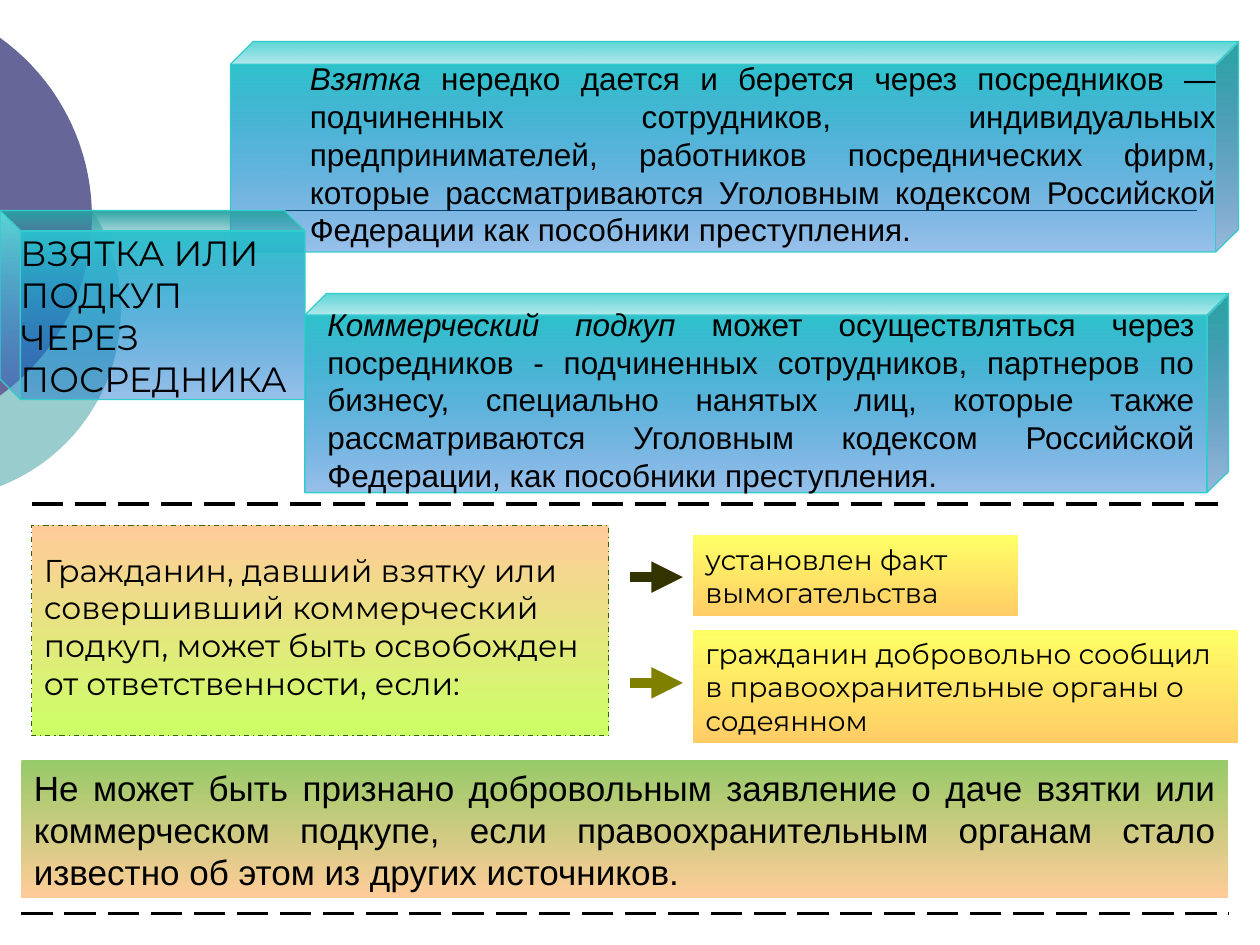
from math import asin, cos, sin

from lxml.etree import SubElement
from pptx import Presentation
from pptx.dml.color import RGBColor
from pptx.enum.dml import MSO_LINE_DASH_STYLE as Dash
from pptx.enum.shapes import MSO_CONNECTOR, MSO_SHAPE
from pptx.enum.text import MSO_ANCHOR as Anchor, MSO_AUTO_SIZE, PP_ALIGN as Align
from pptx.oxml.ns import qn
from pptx.util import Inches, Pt

SANS, DISPLAY = "Arial", "Montserrat"
BLACK = "000000"
YELLOW = ("FFFF66", "FFCC66")


def rgb(value):
    return RGBColor.from_string(value)


class Builder:
    def __init__(self, slide):
        self.shapes = slide.shapes

    def segment(self, mid_y, half_height, bulge, color, steps=40):
        """Part of a disc that bulges out of the left slide edge."""
        radius = (half_height ** 2 + bulge ** 2) / (2 * bulge)
        center_x, limit = bulge - radius, asin(half_height / radius)
        angles = [limit * (2 * i / steps - 1) for i in range(steps + 1)]
        points = [(Inches(center_x + radius * cos(a)), Inches(mid_y + radius * sin(a)))
                  for a in angles]
        form = self.shapes.build_freeform(*points[0])
        form.add_line_segments(points[1:])
        sp = form.convert_to_shape()
        sp.shadow.inherit = False
        sp.fill.solid()
        sp.fill.fore_color.rgb = rgb(color)
        sp.line.fill.background()

    def line(self, x1, x2, y, color=BLACK, width=2.25, dash=None, arrow=False):
        ln = self.shapes.add_connector(
            MSO_CONNECTOR.STRAIGHT, Inches(x1), Inches(y), Inches(x2), Inches(y))
        ln.line.color.rgb = rgb(color)
        ln.line.width = Pt(width)
        if dash:
            ln.line.dash_style = dash
        if arrow:
            ln_xml = ln._element.spPr.find(qn("a:ln"))
            SubElement(ln_xml, qn("a:tailEnd"), type="triangle")
        SubElement(ln._element.spPr, qn("a:effectLst"))

    def panel(self, box, colors, kind=MSO_SHAPE.RECTANGLE, border=None, dash=None):
        """Shape with a gradient that runs from top to bottom."""
        sp = self.shapes.add_shape(kind, *map(Inches, box))
        sp.shadow.inherit = False
        sp.fill.gradient()
        sp.fill.gradient_angle = 270
        for stop, color in zip(sp.fill.gradient_stops, colors):
            stop.color.rgb = rgb(color)
        if border:
            sp.line.color.rgb = rgb(border)
            sp.line.width = Pt(0.75)
            if dash:
                sp.line.dash_style = dash
        else:
            sp.line.fill.background()
        return sp

    def cube(self, box, rotation=0):
        sp = self.panel(box, ("33CCCC", "0066CC"), MSO_SHAPE.CUBE, "33CCCC")
        sp.adjustments[0] = 0.108
        sp.rotation = rotation
        grad = sp._element.spPr.find(qn("a:gradFill"))
        grad.set("rotWithShape", "0")
        last_color = grad.findall(".//" + qn("a:srgbClr"))[-1]
        SubElement(last_color, qn("a:alpha"), val="40000")
        return sp

    def textbox(self, box):
        return self.shapes.add_textbox(*map(Inches, box))

    def add_text(self, sp, paragraphs, size, font, align=Align.LEFT,
                 anchor=Anchor.MIDDLE, indent=0):
        """Each paragraph is a list of (text, italic) runs."""
        tf = sp.text_frame
        tf.word_wrap = True
        tf.auto_size = MSO_AUTO_SIZE.NONE
        tf.vertical_anchor = anchor
        for i, runs in enumerate(paragraphs):
            p = tf.add_paragraph() if i else tf.paragraphs[0]
            p.alignment = align
            if indent:
                p._p.get_or_add_pPr().set("marL", str(Inches(indent)))
            for text, italic in runs:
                r = p.add_run()
                r.text = text
                r.font.name = font
                r.font.size = Pt(size)
                r.font.italic = italic
                r.font.color.rgb = rgb(BLACK)
        return tf


def main():
    prs = Presentation()
    prs.slide_width, prs.slide_height = Inches(10), Inches(7.5)
    b = Builder(prs.slides.add_slide(prs.slide_layouts[6]))

    b.segment(2.46, 1.4, 0.96, "99CCCC")
    b.segment(1.72, 1.42, 0.73, "666699")
    b.line(1.5, 9.5, 1.67, width=1)

    # Bribery through an intermediary
    b.cube((1.83, 0.33, 8, 1.67))
    topic = b.cube((0.46, 1.21, 1.5, 2.42), rotation=270)
    words = ("ВЗЯТКА ИЛИ", "ПОДКУП", "ЧЕРЕЗ", "ПОСРЕДНИКА")
    tf = b.add_text(topic, [[(word, False)] for word in words], 20, DISPLAY)
    tf.word_wrap = False
    tf.margin_left = tf.margin_right = tf.margin_top = tf.margin_bottom = 0
    tf._txBody.bodyPr.set("vert", "eaVert")

    b.add_text(b.textbox((2.17, 0.42, 7.58, 1.6)), [[
        ("Взятка", True),
        (" нередко дается и берется через посредников — подчиненных сотрудников, "
         "индивидуальных предпринимателей, работников посреднических фирм, которые "
         "рассматриваются Уголовным кодексом Российской Федерации как пособники "
         "преступления.", False)]], 18, SANS, Align.JUSTIFY, indent=0.19)

    b.cube((2.42, 2.33, 7.33, 1.58))
    b.add_text(b.textbox((2.5, 2.37, 7.08, 1.6)), [[
        ("Коммерческий подкуп", True),
        (" может осуществляться через посредников - подчиненных сотрудников, "
         "партнеров по бизнесу, специально нанятых лиц, которые также "
         "рассматриваются Уголовным кодексом Российской Федерации, как пособники "
         "преступления.", False)]], 18, SANS, Align.JUSTIFY)

    # Release from liability and its two conditions
    release = b.panel((0.25, 4.17, 4.58, 1.67), ("FFCC99", "CCFF66"),
                      border="336600", dash=Dash.DASH_DOT)
    tf = b.add_text(release, [[
        ("Гражданин, давший взятку или совершивший коммерческий подкуп, может быть "
         "освобожден от ответственности, если:", False)]],
        18, DISPLAY, anchor=Anchor.TOP)
    tf.margin_top = Inches(0.2)

    b.line(0.25, 9.67, 4, dash=Dash.LONG_DASH)
    for y, color in ((4.58, "333300"), (5.42, "808000")):
        b.line(5, 5.42, y, color, 6, arrow=True)

    conditions = (
        ((5.5, 4.25, 2.58, 0.64), "установлен факт вымогательства"),
        ((5.5, 5, 4.33, 0.9),
         "гражданин добровольно сообщил в правоохранительные органы о содеянном"),
    )
    for box, text in conditions:
        b.add_text(b.panel(box, YELLOW), [[(text, False)]], 16, DISPLAY)

    # Closing note
    b.line(0.17, 9.75, 7.25, dash=Dash.LONG_DASH)
    note = b.panel((0.17, 6.03, 9.58, 1.1), ("97CA68", "FFCC99"))
    b.add_text(note, [[
        ("Не может быть признано добровольным заявление о даче взятки или "
         "коммерческом подкупе, если правоохранительным органам стало известно об "
         "этом из других источников.", False)]], 20, SANS, Align.JUSTIFY)

    prs.save("out.pptx")


if __name__ == "__main__":
    main()
